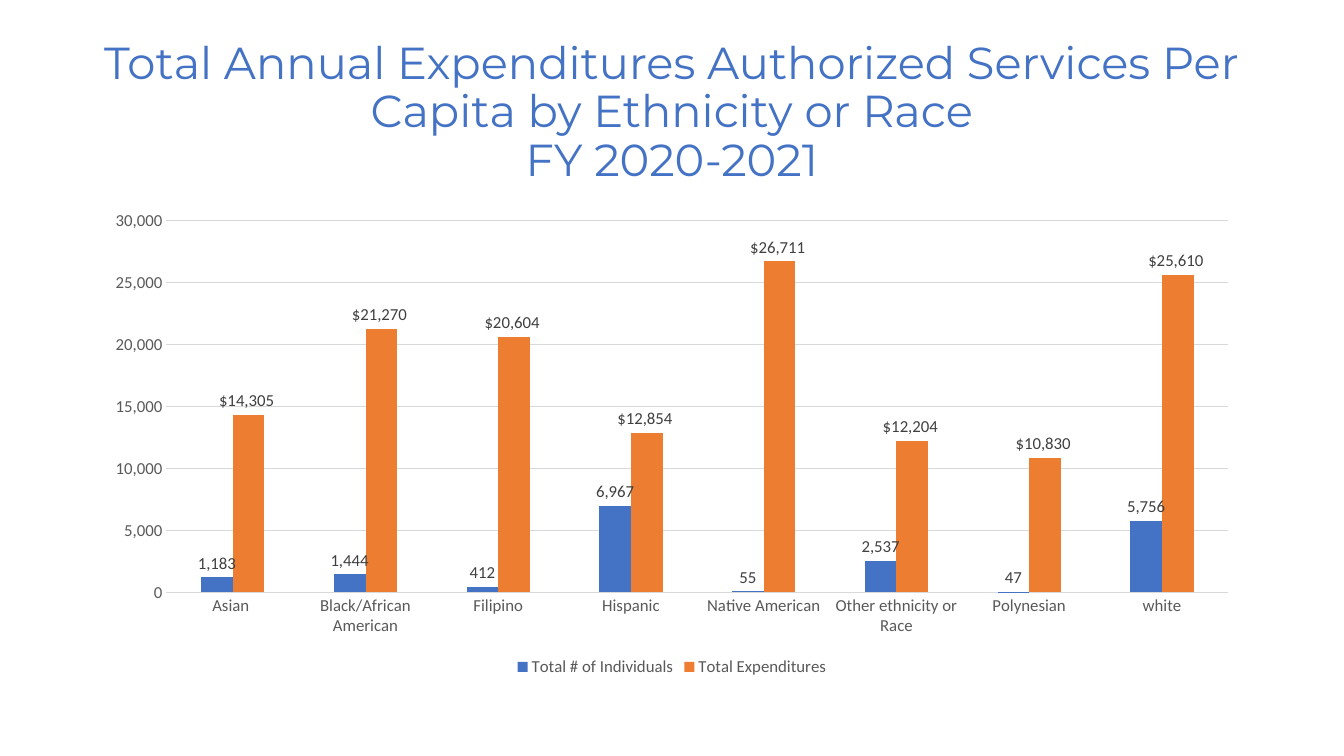
"""Build a slide charting annual expenditures per capita by ethnicity or race."""
from dataclasses import dataclass

from pptx import Presentation
from pptx.chart.chart import Chart
from pptx.chart.data import CategoryChartData
from pptx.dml.color import RGBColor
from pptx.enum.chart import XL_CHART_TYPE, XL_LABEL_POSITION, XL_LEGEND_POSITION, XL_TICK_MARK
from pptx.enum.text import MSO_ANCHOR, MSO_AUTO_SIZE, PP_ALIGN
from pptx.slide import Slide
from pptx.text.text import Font
from pptx.util import Cm, Pt


@dataclass(frozen=True)
class Theme:
    """Colours, fonts and sizes of the slide."""
    blue: str = "4472C4"
    orange: str = "ED7D31"
    axis_text: str = "595959"
    label_text: str = "404040"
    rule: str = "D9D9D9"
    title_font: str = "Montserrat"
    chart_font: str = "Calibri"
    title_size: float = 32
    chart_size: float = 12
    rule_width: float = 0.75


@dataclass(frozen=True)
class BarSeries:
    """One set of columns with its colour and label format."""
    name: str
    values: tuple[int, ...]
    color: str
    number_format: str


THEME = Theme()
LEFT, WIDTH = Cm(2.33), Cm(29.21)
TITLE = "Total Annual Expenditures Authorized Services Per Capita by Ethnicity or Race\vFY 2020-2021"
ETHNICITIES = ("Asian ", "Black/African American", "Filipino", "Hispanic", "Native American",
               "Other ethnicity or Race", "Polynesian", "white")
COUNT_FORMAT = "#,##0"
DOLLAR_FORMAT = '"$"#,##0_);[Red]\\("$"#,##0\\)'
SERIES = (
    BarSeries("Total # of Individuals", (1183, 1444, 412, 6967, 55, 2537, 47, 5756),
              THEME.blue, COUNT_FORMAT),
    BarSeries("Total Expenditures", (14305, 21270, 20604, 12854, 26711, 12204, 10830, 25610),
              THEME.orange, DOLLAR_FORMAT),
)


def style_font(font: Font, name: str, size: float, color: str) -> None:
    """Set typeface, size and colour."""
    font.name = name
    font.size = Pt(size)
    font.bold = False
    font.color.rgb = RGBColor.from_string(color)


def add_title(page: Slide) -> None:
    """Place and format the title placeholder."""
    box = page.shapes.title
    box.left, box.top, box.width, box.height = LEFT, Cm(1.01), WIDTH, Cm(3.68)
    frame = box.text_frame
    frame.text = TITLE
    frame.word_wrap = True
    frame.auto_size = MSO_AUTO_SIZE.NONE
    frame.vertical_anchor = MSO_ANCHOR.MIDDLE
    para = frame.paragraphs[0]
    para.alignment = PP_ALIGN.CENTER
    para.line_spacing = 0.9
    for span in para.runs:
        style_font(span.font, THEME.title_font, THEME.title_size, THEME.blue)


def style_axes(chart: Chart) -> None:
    """Format both axes and the gridlines."""
    for axis in (chart.category_axis, chart.value_axis):
        axis.major_tick_mark = axis.minor_tick_mark = XL_TICK_MARK.NONE
        style_font(axis.tick_labels.font, THEME.chart_font, THEME.chart_size, THEME.axis_text)
    value_axis = chart.value_axis
    value_axis.minimum_scale, value_axis.maximum_scale, value_axis.major_unit = 0, 30000, 5000
    value_axis.tick_labels.number_format = COUNT_FORMAT
    value_axis.tick_labels.number_format_is_linked = False
    value_axis.format.line.fill.background()
    for rule in (chart.category_axis.format.line, value_axis.major_gridlines.format.line):
        rule.color.rgb = RGBColor.from_string(THEME.rule)
        rule.width = Pt(THEME.rule_width)


def style_columns(chart: Chart) -> None:
    """Colour the columns and label their values."""
    plot = chart.plots[0]
    plot.gap_width, plot.overlap = 219, 0
    plot.vary_by_categories = False
    for columns, design in zip(plot.series, SERIES):
        columns.invert_if_negative = False
        columns.format.fill.solid()
        columns.format.fill.fore_color.rgb = RGBColor.from_string(design.color)
        labels = columns.data_labels
        labels.show_value = True
        labels.position = XL_LABEL_POSITION.OUTSIDE_END
        labels.number_format = design.number_format
        labels.number_format_is_linked = False
        style_font(labels.font, THEME.chart_font, THEME.chart_size, THEME.label_text)


def add_expenditure_chart(page: Slide) -> None:
    """Add the clustered column chart with its legend."""
    data = CategoryChartData()
    data.categories = ETHNICITIES
    for design in SERIES:
        data.add_series(design.name, design.values, design.number_format)
    chart = page.shapes.add_chart(XL_CHART_TYPE.COLUMN_CLUSTERED, LEFT, Cm(5.07),
                                  WIDTH, Cm(12.09), data).chart
    chart.has_title = False
    style_font(chart.font, THEME.chart_font, THEME.chart_size, THEME.axis_text)
    chart.has_legend = True
    chart.legend.position = XL_LEGEND_POSITION.BOTTOM
    chart.legend.include_in_layout = False
    style_font(chart.legend.font, THEME.chart_font, THEME.chart_size, THEME.axis_text)
    style_axes(chart)
    style_columns(chart)


def main() -> None:
    """Build and save the deck."""
    deck = Presentation()
    deck.slide_width, deck.slide_height = Cm(33.87), Cm(19.05)
    page = deck.slides.add_slide(deck.slide_layouts.get_by_name("Title Only"))
    add_title(page)
    add_expenditure_chart(page)
    deck.save("out.pptx")


if __name__ == "__main__":
    main()
